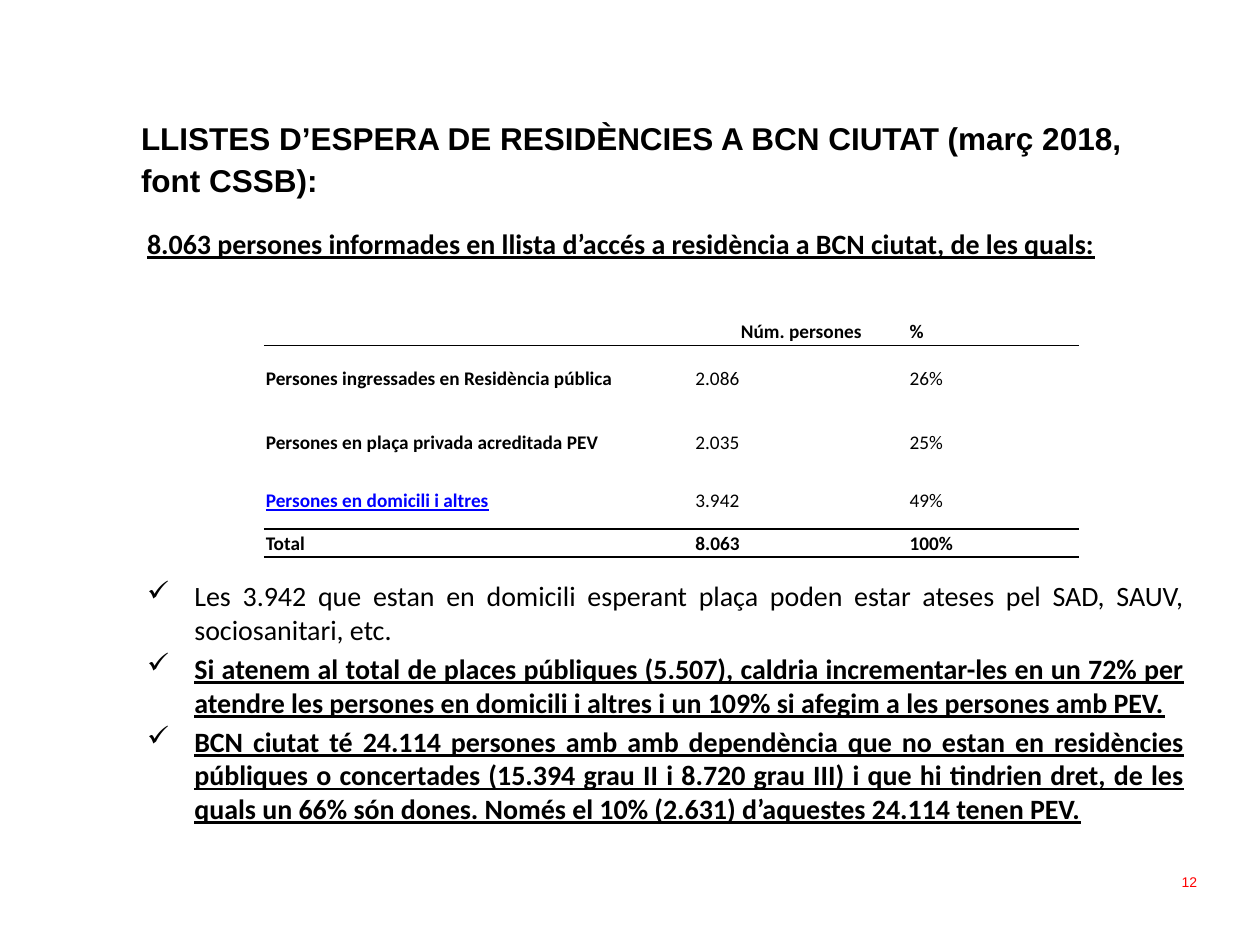
from dataclasses import dataclass
from typing import Any

from pptx import Presentation
from pptx.dml.color import RGBColor
from pptx.enum.text import MSO_ANCHOR, PP_ALIGN
from pptx.oxml.ns import qn
from pptx.util import Pt
from lxml.etree import SubElement


@dataclass(frozen=True)
class Theme:
    black: RGBColor = RGBColor(0, 0, 0)
    white: RGBColor = RGBColor(255, 255, 255)
    blue: RGBColor = RGBColor(0, 0, 255)
    red: RGBColor = RGBColor(255, 0, 0)
    head_font: str = "Arial"
    body_font: str = "Calibri"
    title_size: float = 18
    body_size: float = 16
    table_size: float = 11
    number_size: float = 8


@dataclass(frozen=True)
class Row:
    label: str
    people: str
    share: str
    height: float
    bold_values: bool = False
    linked: bool = False
    rule_above: bool = False
    rule_below: bool = False


T = Theme()
BODY = dict(name=T.body_font, size=Pt(T.body_size))
STRONG = dict(BODY, bold=True, underline=True)
CHECK_INDENT = 27
TABLE_GAP = 182  # space left for the table between heading and checks

CHECKS = [
    ("Les 3.942 que estan en domicili esperant plaça poden estar ateses pel SAD, "
     "SAUV, sociosanitari, etc.", BODY),
    ("Si atenem al total de places públiques (5.507), caldria incrementar-les en un "
     "72% per atendre les persones en domicili i altres i un 109% si afegim a les "
     "persones amb PEV.", STRONG),
    ("BCN ciutat té 24.114 persones amb amb dependència que no estan en residències "
     "públiques o concertades (15.394 grau II i 8.720 grau III) i que hi tindrien "
     "dret, de les quals un 66% són dones. Només el 10% (2.631) d’aquestes 24.114 "
     "tenen PEV.", STRONG),
]
COLUMNS = [245.5, 122.4, 97]
ROWS = [
    Row("", "Núm. persones", "%", 16, bold_values=True, rule_below=True),
    Row("Persones ingressades en Residència pública", "2.086", "26%", 38,
        rule_above=True),
    Row("Persones en plaça privada acreditada PEV", "2.035", "25%", 34.5),
    Row("Persones en domicili i altres", "3.942", "49%", 32.5, linked=True,
        rule_below=True),
    Row("Total", "8.063", "100%", 16, bold_values=True, rule_above=True,
        rule_below=True),
]


def set_all(target: Any, values: dict) -> None:
    for name, value in values.items():
        setattr(target, name, value)


def write(p: Any, text: str, font: dict, color: RGBColor = T.black) -> None:
    r = p.add_run()
    r.text = text
    set_all(r.font, font)
    r.font.color.rgb = color


def add_check(p: Any) -> None:
    pPr = p._p.get_or_add_pPr()
    pPr.set("marL", str(Pt(CHECK_INDENT)))
    pPr.set("indent", str(-Pt(CHECK_INDENT)))
    SubElement(pPr, qn("a:buChar")).set("char", "✓")


def add_rule(cell: Any, side: str) -> None:
    ln = SubElement(cell._tc.get_or_add_tcPr(), qn(f"a:{side}"), w=str(Pt(1)))
    fill = SubElement(ln, qn("a:solidFill"))
    SubElement(fill, qn("a:srgbClr")).set("val", str(T.black))


def fill_cell(cell: Any, text: str, row: Row, col: int) -> None:
    if row.rule_above:
        add_rule(cell, "lnT")
    if row.rule_below:
        add_rule(cell, "lnB")
    cell.fill.solid()
    cell.fill.fore_color.rgb = T.white
    set_all(cell, dict(margin_left=Pt(0.7), margin_right=Pt(0.7), margin_top=Pt(0.7),
                       margin_bottom=0, vertical_anchor=MSO_ANCHOR.MIDDLE))
    p = cell.text_frame.paragraphs[0]
    if not text:  # keeps the blank corner cell as low as its row
        SubElement(p._p, qn("a:endParaRPr")).set("sz", str(int(T.table_size * 100)))
        return
    centred = row is ROWS[0] and col == 1
    p.alignment = PP_ALIGN.CENTER if centred else PP_ALIGN.JUSTIFY
    linked = row.linked and col == 0
    font = dict(name=T.body_font, size=Pt(T.table_size),
                bold=col == 0 or row.bold_values, underline=linked)
    write(p, text, font, T.blue if linked else T.black)


def add_waiting_table(s: Any) -> None:
    frame = s.shapes.add_table(len(ROWS), len(COLUMNS), Pt(151.2), Pt(181.4),
                               Pt(sum(COLUMNS)), Pt(sum(r.height for r in ROWS)))
    table = frame.table
    set_all(table, dict(first_row=False, horz_banding=False))
    for column, width in zip(table.columns, COLUMNS):
        column.width = Pt(width)
    for i, row in enumerate(ROWS):
        table.rows[i].height = Pt(row.height)
        for col, text in enumerate((row.label, row.people, row.share)):
            fill_cell(table.cell(i, col), text, row, col)


def add_text_frame(s: Any, left: float, top: float, width: float, height: float) -> Any:
    tf = s.shapes.add_textbox(Pt(left), Pt(top), Pt(width), Pt(height)).text_frame
    tf.word_wrap = True
    return tf


def main() -> None:
    prs = Presentation()
    set_all(prs, dict(slide_width=Pt(720), slide_height=Pt(540)))
    s = prs.slides.add_slide(prs.slide_layouts[5])

    # Title
    title = s.shapes.title
    set_all(title, dict(left=Pt(73.4), top=Pt(65.5), width=Pt(589.7), height=Pt(67.7)))
    tf = title.text_frame
    set_all(tf, dict(word_wrap=True, vertical_anchor=MSO_ANCHOR.TOP, margin_top=0))
    p = tf.paragraphs[0]
    set_all(p, dict(alignment=PP_ALIGN.LEFT, line_spacing=Pt(24)))
    write(p, "LLISTES D’ESPERA DE RESIDÈNCIES A BCN CIUTAT (març 2018, font CSSB):",
          dict(name=T.head_font, size=Pt(T.title_size), bold=True))

    # Heading and checked points
    tf = add_text_frame(s, 77, 126, 607, 356.4)
    p = tf.paragraphs[0]
    p.alignment = PP_ALIGN.JUSTIFY
    write(p, "8.063 persones informades en llista d’accés a residència a BCN ciutat, "
             "de les quals:", STRONG)
    for i, (text, font) in enumerate(CHECKS):
        p = tf.add_paragraph()
        add_check(p)
        set_all(p, dict(alignment=PP_ALIGN.JUSTIFY,
                        space_before=Pt(3.2 if i else TABLE_GAP)))
        write(p, text, font)

    # Slide number
    tf = add_text_frame(s, 523.4, 489.6, 167.8, 28.8)
    tf.vertical_anchor = MSO_ANCHOR.MIDDLE
    p = tf.paragraphs[0]
    p.alignment = PP_ALIGN.RIGHT
    write(p, "12", dict(name=T.head_font, size=Pt(T.number_size)), T.red)

    # Waiting list table
    add_waiting_table(s)

    prs.save("out.pptx")


if __name__ == "__main__":
    main()
